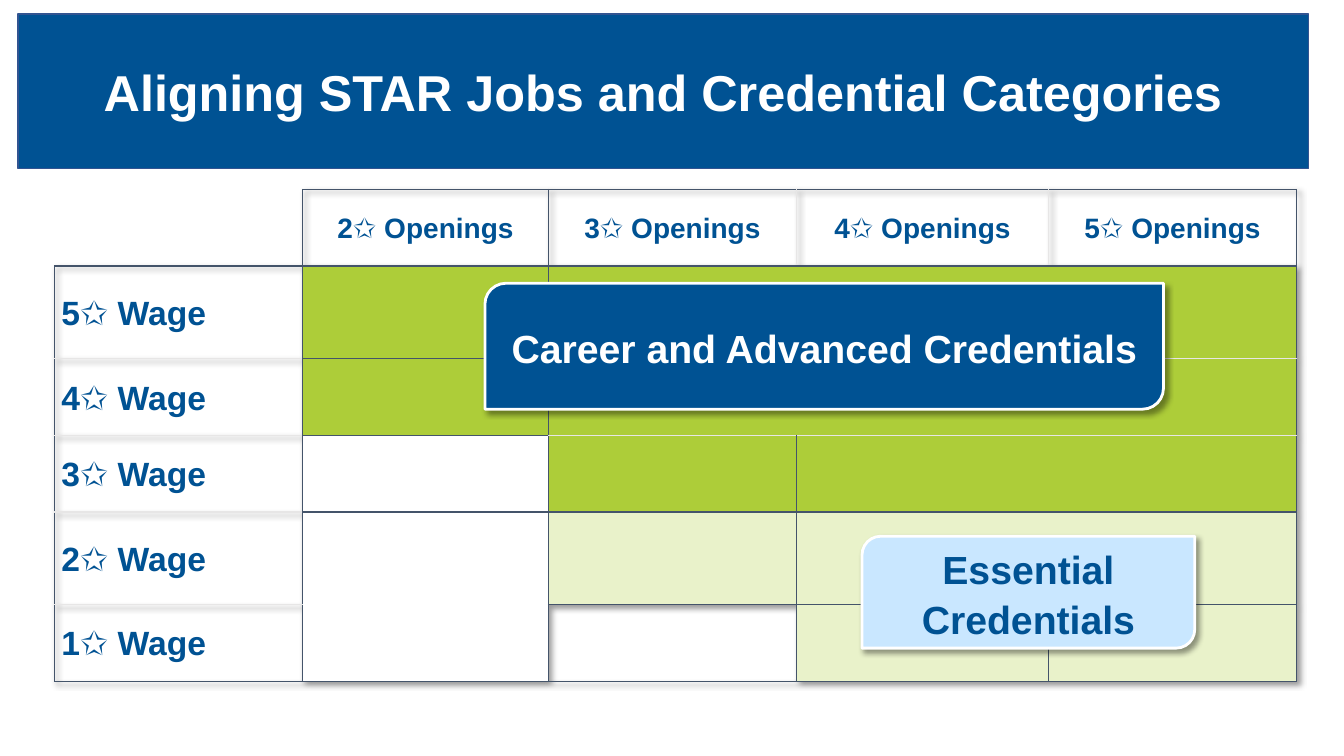
from dataclasses import dataclass

from lxml.etree import SubElement
from pptx import Presentation
from pptx.dml.color import RGBColor
from pptx.enum.shapes import MSO_SHAPE
from pptx.enum.text import MSO_ANCHOR, PP_ALIGN
from pptx.oxml.ns import qn
from pptx.util import Inches, Pt

NAVY = RGBColor(0x00, 0x52, 0x93)
EDGE = RGBColor(0x32, 0x54, 0x91)
SKY = RGBColor(0xC9, 0xE7, 0xFF)
GREEN = RGBColor(0xAD, 0xCD, 0x39)
PALE = RGBColor(0xE9, 0xF2, 0xCA)
WHITE = RGBColor(0xFF, 0xFF, 0xFF)
SLATE = RGBColor(0x44, 0x54, 0x6A)
GRAY = RGBColor(0xE7, 0xE6, 0xE6)
BLACK = RGBColor(0x00, 0x00, 0x00)

FONT = "Arial"
PLAIN = "{2D5ABB26-0587-4C30-8999-92F81FD0307C}"  # table style without grid


@dataclass
class Box:
    text: str
    area: tuple[float, float, float, float]
    kind: MSO_SHAPE
    fill: RGBColor
    line: RGBColor
    width: float
    ink: RGBColor
    size: int
    space: float = 1.07
    after: int = 0
    shade: bool = True


@dataclass
class Row:
    height: float
    texts: list[str]
    fills: str  # one letter of FILLS per cell
    edges: str  # left, top, right, bottom of each cell, as in LINES


FILLS = {"G": GREEN, "P": PALE, "W": WHITE}
LINES = {"D": SLATE, "L": GRAY}
SIDES = (("a:lnL", 0), ("a:lnR", 2), ("a:lnT", 1), ("a:lnB", 3))

WIDTHS = (2.46, 2.44, 2.46, 2.5, 2.46)
ROWS = [
    Row(0.76, [""] + [f"{n}✩ Openings" for n in range(2, 6)],
        "-----", "--DD DDDD DDLD LDLD LDDD"),
    Row(0.92, ["5✩ Wage"], "-GGGG", "DDDL DD-- -D-L -D-L -DDL"),
    Row(0.76, ["4✩ Wage"], "-GGGG", "DLDL D--D -L-- -L-L -LDL"),
    Row(0.76, ["3✩ Wage"], "-WGGG", "DLDL DDD- D--D -L-D -LDD"),
    Row(0.92, ["2✩ Wage"], "-WPPP", "DLDL D-D- DD-D -D-- -DD-"),
    Row(0.76, ["1✩ Wage"], "-W-PP", "DLDD D-DD DDDD D--D --DD"),
]

BOXES = [
    Box("Essential Credentials", (8.55, 5.32, 3.3, 1.11),
        MSO_SHAPE.ROUND_2_DIAG_RECTANGLE, SKY, WHITE, 2, NAVY, 28),
    Box("Career and Advanced Credentials", (4.81, 2.81, 6.73, 1.25),
        MSO_SHAPE.ROUND_2_DIAG_RECTANGLE, NAVY, WHITE, 2, WHITE, 28, after=8),
    Box("Aligning STAR Jobs and Credential Categories", (0.18, 0.14, 12.8, 1.53),
        MSO_SHAPE.RECTANGLE, NAVY, EDGE, 1, WHITE, 36, space=1.0, shade=False),
]


def write(frame, text: str, size: int, ink: RGBColor, align: PP_ALIGN,
          space: float = 1.07, after: int = 0) -> None:
    para = frame.paragraphs[0]
    para.alignment = align
    para.line_spacing = space
    para.space_after = Pt(after)
    run = para.add_run()
    run.text = text
    run.font.name = FONT
    run.font.size = Pt(size)
    run.font.bold = True
    run.font.color.rgb = ink


def tint(node, color: RGBColor):
    return SubElement(node, qn("a:srgbClr"), val=str(color))


def shadow(effects) -> None:
    drop = SubElement(effects, qn("a:outerShdw"), blurRad=str(Pt(4)),
                      dist=str(Pt(3)), dir=str(45 * 60000), algn="tl",
                      rotWithShape="0")
    SubElement(tint(drop, BLACK), qn("a:alpha"), val="40000")


def border(cell, edges: str) -> None:
    props = cell._tc.get_or_add_tcPr()
    for tag, index in SIDES:
        if edges[index] in LINES:
            line = SubElement(props, qn(tag), w=str(Pt(1)))
            tint(SubElement(line, qn("a:solidFill")), LINES[edges[index]])


def draw_grid(slide) -> None:
    frame = slide.shapes.add_table(
        len(ROWS), len(WIDTHS), Inches(0.54), Inches(1.88),
        Inches(sum(WIDTHS)), Inches(sum(row.height for row in ROWS)))
    table = frame.table
    table.first_row = table.horz_banding = False

    # Plain style and a soft shadow for the whole table
    props = table._tbl.tblPr
    style = props.find(qn("a:tableStyleId"))
    style.text = PLAIN
    shadow(SubElement(props, qn("a:effectLst")))
    props.append(style)

    for column, width in zip(table.columns, WIDTHS):
        column.width = Inches(width)
    for top, row in enumerate(ROWS):
        table.rows[top].height = Inches(row.height)
        for left, edges in enumerate(row.edges.split()):
            cell = table.cell(top, left)
            border(cell, edges)
            if row.fills[left] in FILLS:
                cell.fill.solid()
                cell.fill.fore_color.rgb = FILLS[row.fills[left]]
            else:
                cell.fill.background()
            cell.vertical_anchor = MSO_ANCHOR.MIDDLE
            cell.margin_left = cell.margin_right = Inches(0.07)
            cell.margin_top = cell.margin_bottom = 0
            if left < len(row.texts) and row.texts[left]:
                head = top == 0
                write(cell.text_frame, row.texts[left], 20 if head else 24, NAVY,
                      PP_ALIGN.CENTER if head else PP_ALIGN.LEFT)


def draw_box(slide, box: Box) -> None:
    shape = slide.shapes.add_shape(box.kind, *map(Inches, box.area))
    shape.fill.solid()
    shape.fill.fore_color.rgb = box.fill
    shape.line.color.rgb = box.line
    shape.line.width = Pt(box.width)
    shape.shadow.inherit = False
    if box.shade:
        shadow(shape._element.spPr.find(qn("a:effectLst")))
    frame = shape.text_frame
    frame.word_wrap = True
    frame.vertical_anchor = MSO_ANCHOR.MIDDLE
    write(frame, box.text, box.size, box.ink, PP_ALIGN.CENTER, box.space, box.after)


def main() -> None:
    deck = Presentation()
    deck.slide_width = Inches(13.33)
    deck.slide_height = Inches(7.5)
    slide = deck.slides.add_slide(deck.slide_layouts[6])

    # Wage and openings grid, then the labels and title over it
    draw_grid(slide)
    for box in BOXES:
        draw_box(slide, box)
    deck.save("out.pptx")


if __name__ == "__main__":
    main()
